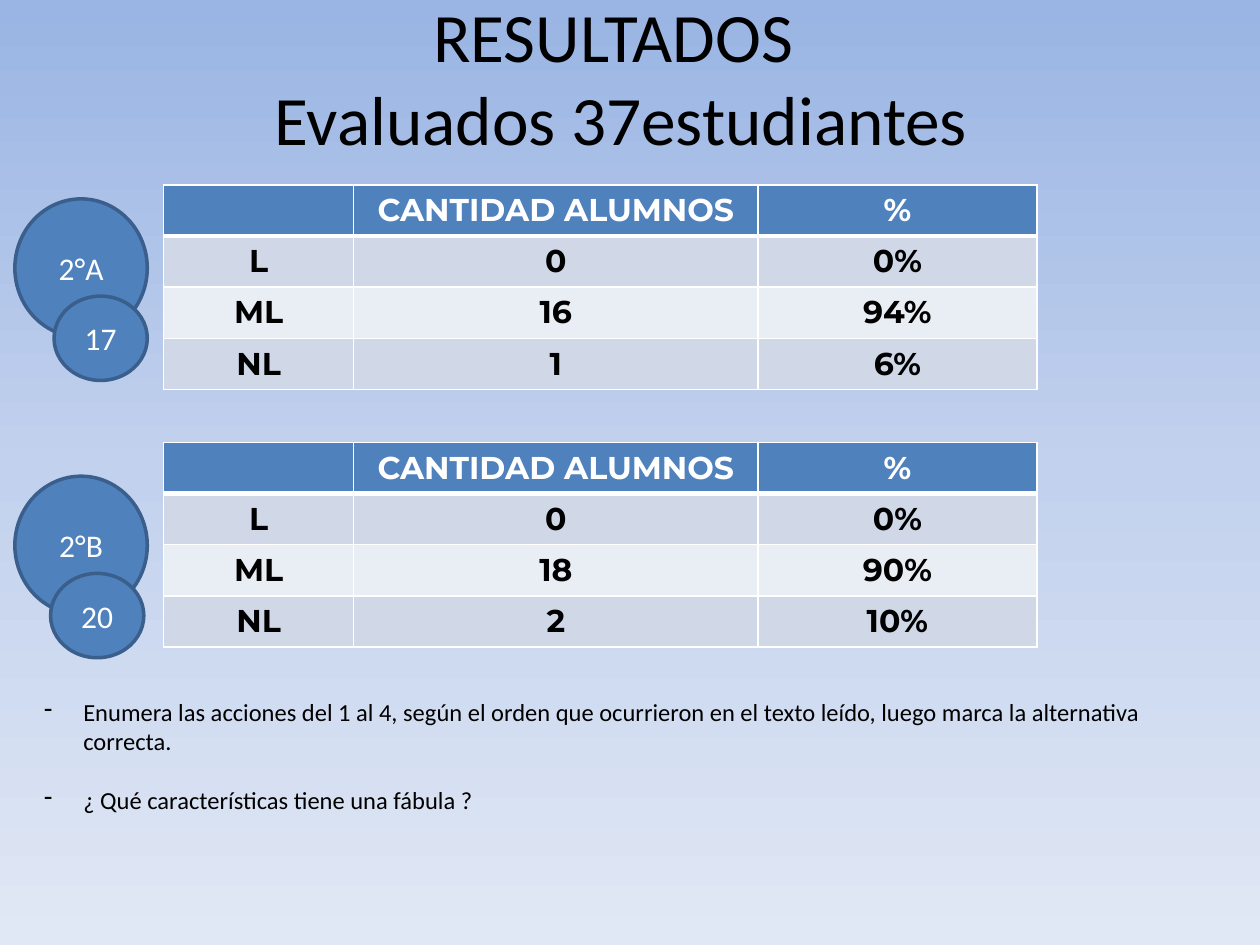
"""Build the results slide with one table and two circles for each class."""
import copy
import dataclasses

import pptx
import pptx.dml.color
import pptx.enum.shapes
import pptx.enum.text
import pptx.oxml
import pptx.oxml.ns
import pptx.util

Cm, Pt = pptx.util.Cm, pptx.util.Pt
RGB = pptx.dml.color.RGBColor.from_string
ALIGN = pptx.enum.text.PP_ALIGN
MIDDLE = pptx.enum.text.MSO_ANCHOR.MIDDLE
OVAL = pptx.enum.shapes.MSO_SHAPE.OVAL


@dataclasses.dataclass(frozen=True)
class Theme:
    sky: tuple = ("9AB5E4", "C2D1ED", "E1E8F5")
    blue: str = "4F81BD"
    rim: str = "3A5F8C"
    bands: tuple = ("E9EDF4", "D0D8E8")
    black: str = "000000"
    white: str = "FFFFFF"
    body: str = "Calibri"
    strong: str = "Montserrat"
    title: float = 39.6
    label: int = 18
    note: int = 14


theme = Theme()


def write(frame, text, size=theme.label, color=theme.black, face=theme.body,
          bold=False, align=ALIGN.CENTER, anchor=None, bullet=None, gap=0):
    frame.word_wrap = True
    if anchor is not None:
        frame.vertical_anchor = anchor
    for i, line in enumerate(text.split("\n")):
        para = frame.add_paragraph() if i else frame.paragraphs[0]
        para.text = line
        para.alignment = align
        if i and gap:
            para.space_before = Pt(gap)
        if bullet:
            props = para._p.get_or_add_pPr()
            props.set("marL", str(Cm(0.79)))
            props.set("indent", str(-Cm(0.79)))
            props.append(pptx.oxml.parse_xml(
                f'<a:buChar {pptx.oxml.ns.nsdecls("a")} char="{bullet}"/>'))
        for run in para.runs:
            run.font.size = Pt(size)
            run.font.name = face
            run.font.bold = bold
            run.font.color.rgb = RGB(color)


def edge(cell, side, width):
    cell._tc.get_or_add_tcPr().append(pptx.oxml.parse_xml(
        f'<a:ln{side} {pptx.oxml.ns.nsdecls("a")} w="{Pt(width)}"><a:solidFill>'
        f'<a:srgbClr val="{theme.white}"/></a:solidFill></a:ln{side}>'))


deck = pptx.Presentation()
deck.slide_width, deck.slide_height = Cm(25.4), Cm(19.05)
slide = deck.slides.add_slide(deck.slide_layouts[6])
shapes = slide.shapes

sky = slide.background.fill
sky.gradient()
sky.gradient_angle = 270
first = next(slide.element.iter(pptx.oxml.ns.qn("a:gs")))
first.addnext(copy.deepcopy(first))
for i, stop in enumerate(sky.gradient_stops):
    stop.position = i / 2
    stop.color.rgb = RGB(theme.sky[i])

title = shapes.add_textbox(Cm(1.09), Cm(0.53), Cm(22.86), Cm(2.01))
write(title.text_frame, "RESULTADOS \vEvaluados 37estudiantes",
      size=theme.title, anchor=MIDDLE)

groups = [
    ("2°A", "17", 3.73, 4.01, 1.09, [("0", "0%"), ("16", "94%"), ("1", "6%")]),
    ("2°B", "20", 8.92, 9.6, 1.02, [("0", "0%"), ("18", "90%"), ("2", "10%")]),
]
thick = {(0, "B"), (1, "T")}

for name, total, top, high, left, data in groups:
    grid = shapes.add_table(4, 3, Cm(3.3), Cm(top), Cm(17.6), Cm(4.12)).table
    for col, width in zip(grid.columns, (3.83, 8.15, 5.62)):
        col.width = Cm(width)
    rows = [("", "CANTIDAD ALUMNOS", "%")]
    rows += [(level, *pair) for level, pair in zip(("L", "ML", "NL"), data)]
    for r, row in enumerate(rows):
        grid.rows[r].height = Cm(1.03)
        for c, text in enumerate(row):
            cell = grid.cell(r, c)
            for side in "LRTB":
                edge(cell, side, 3 if (r, side) in thick else 1)
            cell.fill.solid()
            cell.fill.fore_color.rgb = RGB(theme.bands[r % 2] if r else theme.blue)
            write(cell.text_frame, text, face=theme.strong, bold=True,
                  color=theme.black if r else theme.white)

    for text, x, y, w, h in ((name, 0.3, high, 2.67, 2.79),
                             (total, left, high + 1.96, 1.88, 1.7)):
        disc = shapes.add_shape(OVAL, Cm(x), Cm(y), Cm(w), Cm(h))
        disc.shadow.inherit = False
        disc.fill.solid()
        disc.fill.fore_color.rgb = RGB(theme.blue)
        disc.line.color.rgb = RGB(theme.rim)
        disc.line.width = Pt(2)
        write(disc.text_frame, text, color=theme.white, anchor=MIDDLE)

notes = shapes.add_textbox(Cm(0.64), Cm(13.92), Cm(23.8), Cm(2.64))
write(notes.text_frame,
      "Enumera las acciones del 1 al 4, según el orden que ocurrieron en el texto "
      "leído, luego marca la alternativa correcta.\n"
      "¿ Qué características tiene una fábula ?",
      size=theme.note, align=ALIGN.LEFT, bullet="-", gap=17)

deck.save("out.pptx")
